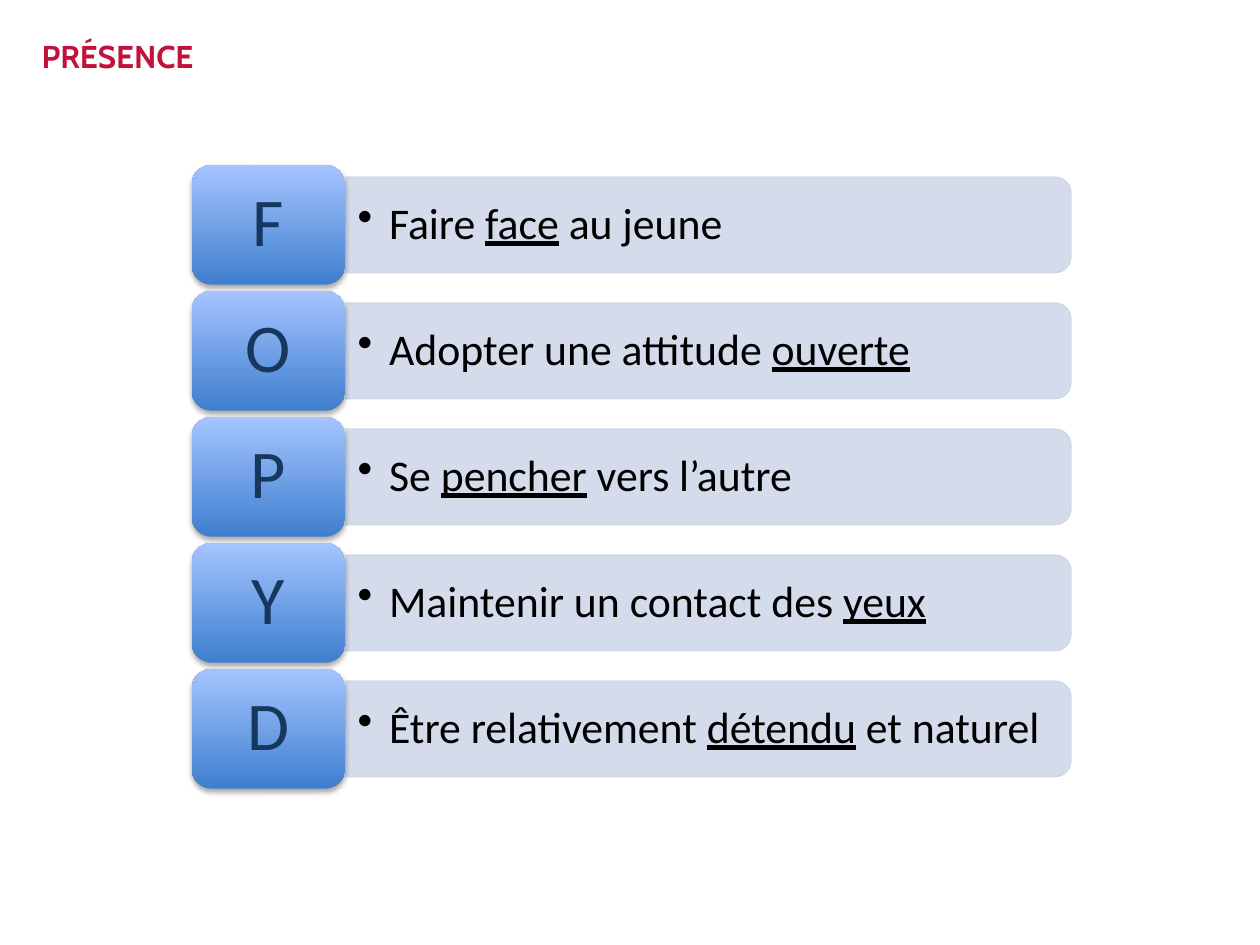
"""Build the PRÉSENCE slide: five lettered attitudes, each with a short bullet."""
import pptx
import pptx.dml.color
import pptx.enum.shapes
import pptx.enum.text
import pptx.oxml
import pptx.oxml.ns
import pptx.util
from lxml import etree

Inches = pptx.util.Inches
Pt = pptx.util.Pt
RGB = pptx.dml.color.RGBColor.from_string
SHAPE = pptx.enum.shapes.MSO_SHAPE
ALIGN = pptx.enum.text.PP_ALIGN
MIDDLE = pptx.enum.text.MSO_ANCHOR.MIDDLE
qn = pptx.oxml.ns.qn

THEME = {
    "title": {"font": "Cabin", "size": 18, "color": "C2113A"},
    "letter": {"font": "Calibri", "size": 39, "color": "17375E"},
    "bullet": {"font": "Calibri", "size": 25, "color": "000000"},
    "bar": "D0D8E8",
    "tile": ("3F7FCE", "A4C4FF"),
}
SHADOW = (
    f'<a:outerShdw {pptx.oxml.ns.nsdecls("a")} blurRad="40000" dist="23000" '
    'dir="5400000" rotWithShape="0"><a:srgbClr val="000000">'
    '<a:alpha val="35000"/></a:srgbClr></a:outerShdw>'
)
ROWS = [
    ("F", ("Faire ", "face", " au jeune")),
    ("O", ("Adopter une attitude ", "ouverte", "")),
    ("P", ("Se ", "pencher", " vers l’autre")),
    ("Y", ("Maintenir un contact des ", "yeux", "")),
    ("D", ("Être relativement ", "détendu", " et naturel")),
]
TILE_LEFT, TILE_TOP, TILE_W, TILE_H = 1.52, 1.31, 1.22, 0.95
BAR_W, BAR_H, PITCH = 5.76, 0.76, 1.0


def style_run(r, style):
    r.font.name = style["font"]
    r.font.size = Pt(style["size"])
    r.font.color.rgb = RGB(style["color"])


def set_frame(tf, x_inset, y_inset, anchor):
    tf.word_wrap = True
    tf.vertical_anchor = anchor
    tf.margin_left = tf.margin_right = Inches(x_inset)
    tf.margin_top = tf.margin_bottom = Inches(y_inset)


prs = pptx.Presentation()
prs.slide_width, prs.slide_height = Inches(10), Inches(7.5)
s = prs.slides.add_slide(prs.slide_layouts[6])

title = s.shapes.add_textbox(Inches(0.33), Inches(0.29), Inches(9.33), Inches(0.76))
set_frame(title.text_frame, 0, 0, pptx.enum.text.MSO_ANCHOR.TOP)
title.text_frame.text = "PRÉSENCE"
r = title.text_frame.paragraphs[0].runs[0]
style_run(r, THEME["title"])
r.font.bold = True

for i, (letter, parts) in enumerate(ROWS):
    tile_top = TILE_TOP + i * PITCH
    mid_y = tile_top + TILE_H / 2
    bar_left = TILE_LEFT + TILE_W
    mid_x = bar_left + BAR_W / 2

    bar = s.shapes.add_shape(
        SHAPE.ROUND_2_SAME_RECTANGLE,
        Inches(mid_x - BAR_H / 2), Inches(mid_y - BAR_W / 2), Inches(BAR_H), Inches(BAR_W),
    )
    bar.rotation = 90
    bar.shadow.inherit = False
    bar.fill.solid()
    bar.fill.fore_color.rgb = RGB(THEME["bar"])
    bar_color = bar.fill._xPr.find(qn("a:solidFill")).find(qn("a:srgbClr"))
    etree.SubElement(bar_color, qn("a:alpha"), val="90000")
    bar.line.color.rgb = RGB(THEME["bar"])
    bar.line.width = Pt(0.75)

    box = s.shapes.add_textbox(Inches(bar_left), Inches(mid_y - 0.345), Inches(5.72), Inches(0.69))
    set_frame(box.text_frame, 0.1, 0.05, MIDDLE)
    p = box.text_frame.paragraphs[0]
    pPr = p._p.get_or_add_pPr()
    pPr.set("marL", str(Inches(0.25)))
    pPr.set("indent", str(Inches(-0.25)))
    etree.SubElement(pPr, qn("a:buChar"), char="•")
    p.line_spacing = 0.9
    for j, part in enumerate(parts):
        if part:
            r = p.add_run()
            r.text = part
            style_run(r, THEME["bullet"])
            r.font.underline = j == 1

    tile = s.shapes.add_shape(
        SHAPE.ROUNDED_RECTANGLE,
        Inches(TILE_LEFT), Inches(tile_top), Inches(TILE_W), Inches(TILE_H),
    )
    tile.fill.gradient()
    tile.fill.gradient_angle = 90
    for stop, color in zip(tile.fill.gradient_stops, THEME["tile"]):
        stop.color.rgb = RGB(color)
    tile.line.fill.background()
    tile.shadow.inherit = False
    tile._element.spPr.find(qn("a:effectLst")).append(pptx.oxml.parse_xml(SHADOW))
    set_frame(tile.text_frame, 0.16, 0.08, MIDDLE)
    tile.text_frame.text = letter
    p = tile.text_frame.paragraphs[0]
    p.alignment = ALIGN.CENTER
    p.line_spacing = 0.9
    style_run(p.runs[0], THEME["letter"])

prs.save("out.pptx")
